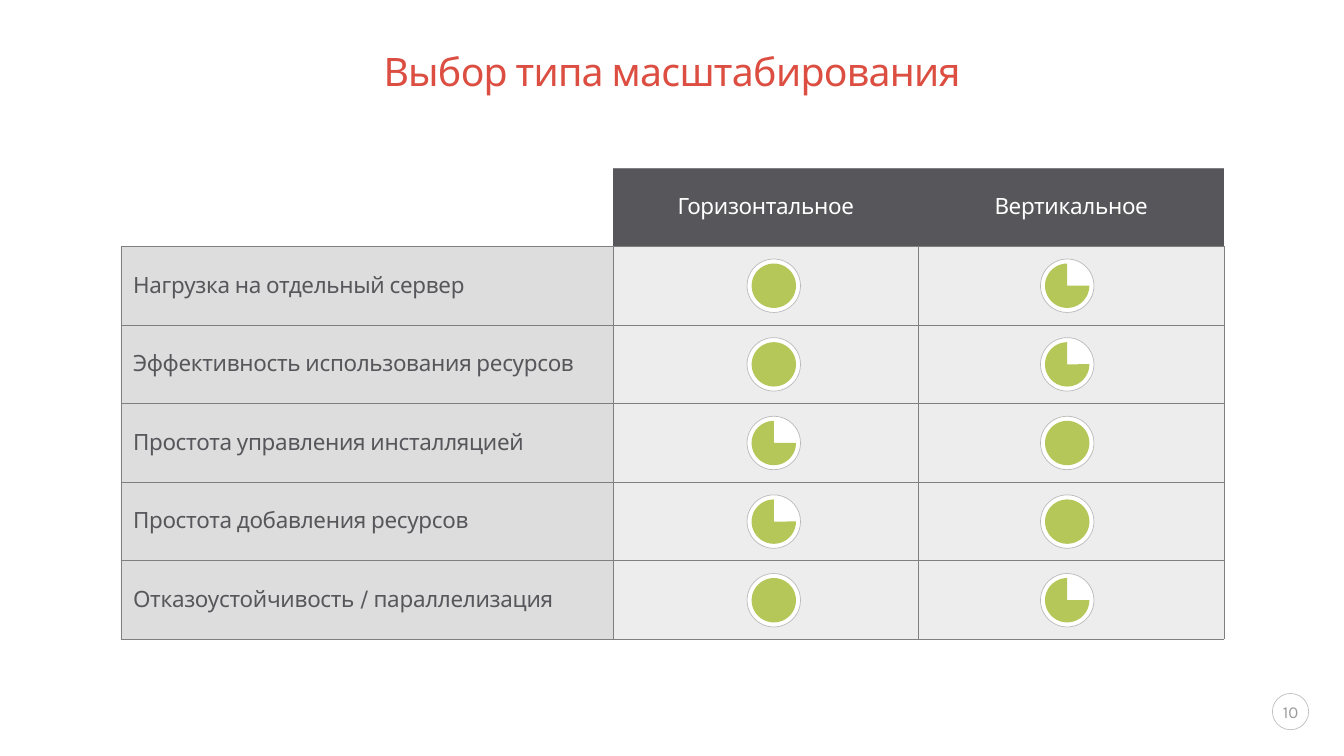
from dataclasses import dataclass

import lxml.etree
import pptx
import pptx.dml.color
import pptx.enum.shapes
import pptx.enum.text
import pptx.oxml.ns
import pptx.util

Inches = pptx.util.Inches
Pt = pptx.util.Pt
qn = pptx.oxml.ns.qn
Align = pptx.enum.text.PP_ALIGN
Shape = pptx.enum.shapes.MSO_SHAPE
MIDDLE = pptx.enum.text.MSO_ANCHOR.MIDDLE


@dataclass(frozen=True)
class Theme:
    font: str = "Karla"
    accent: str = "DC4E41"
    dark: str = "57565A"
    white: str = "FFFFFF"
    label_fill: str = "555555"
    score_fill: str = "808080"
    border: str = "7F7F7F"
    score: str = "B6C759"
    page_ring: str = "BFBFBF"
    page_text: str = "9A9A9B"
    title_size: float = 28
    table_size: float = 16
    page_size: float = 12
    line: float = 0.5


@dataclass(frozen=True)
class Criterion:
    label: str
    full: tuple[bool, bool]  # full or three-quarter score per scaling type


THEME = Theme()
HEADERS = ("Горизонтальное", "Вертикальное")
CRITERIA = (
    Criterion("Нагрузка на отдельный сервер", (True, False)),
    Criterion("Эффективность использования ресурсов", (True, False)),
    Criterion("Простота управления инсталляцией", (False, True)),
    Criterion("Простота добавления ресурсов", (False, True)),
    Criterion("Отказоустойчивость / параллелизация", (True, False)),
)
COLUMN_WIDTHS = (4.88, 3.03, 3.03)
TABLE_LEFT, TABLE_TOP, TABLE_HEIGHT = 1.2, 1.67, 4.67
ROW_HEIGHT = TABLE_HEIGHT / (len(CRITERIA) + 1)
SCORE_LEFTS = (7.41, 10.32)
SCORE_TOP, SCORE_STEP = 2.57, 0.78
RING, DISC = 0.53, 0.44
PAGE_LEFT, PAGE_TOP, PAGE_RING = 12.62, 6.88, 0.36


def rgb(color: str) -> pptx.dml.color.RGBColor:
    return pptx.dml.color.RGBColor.from_string(color)


def set_alpha(parent, percent: int) -> None:
    color = parent.find(".//" + qn("a:srgbClr"))
    lxml.etree.SubElement(color, qn("a:alpha"), val=str(percent * 1000))


def style_text(frame, text: str, size: float, color: str, align, spacing: int = 0) -> None:
    frame.text = text
    paragraph = frame.paragraphs[0]
    paragraph.alignment = align
    run = paragraph.runs[0]
    run.font.name = THEME.font
    run.font.size = Pt(size)
    run.font.color.rgb = rgb(color)
    if spacing:
        run.font._element.set("spc", str(spacing))


def set_borders(cell, sides: str) -> None:
    properties = cell._tc.get_or_add_tcPr()
    for side in "LRTB":
        line = lxml.etree.SubElement(properties, qn(f"a:ln{side}"), w=str(Pt(THEME.line)))
        if side in sides:
            fill = lxml.etree.SubElement(line, qn("a:solidFill"))
            lxml.etree.SubElement(fill, qn("a:srgbClr"), val=THEME.border)
            set_alpha(fill, 50)
        else:
            lxml.etree.SubElement(line, qn("a:noFill"))


def fill_cell(cell, color: str, alpha: int = 100) -> None:
    cell.fill.solid()
    cell.fill.fore_color.rgb = rgb(color)
    if alpha < 100:
        set_alpha(cell._tc.tcPr.find(qn("a:solidFill")), alpha)


def write_cell(cell, text: str, color: str, align) -> None:
    style_text(cell.text_frame, text, THEME.table_size, color, align, -20)
    cell.vertical_anchor = MIDDLE
    cell.margin_left = cell.margin_right = Inches(0.12)
    cell.margin_top = cell.margin_bottom = Inches(0.07)


def add_round(shapes, kind, left: float, top: float, size: float,
              fill: str | None = None, line: str | None = None):
    figure = shapes.add_shape(kind, Inches(left), Inches(top), Inches(size), Inches(size))
    figure.shadow.inherit = False
    if fill:
        figure.fill.solid()
        figure.fill.fore_color.rgb = rgb(fill)
    else:
        figure.fill.background()
    if line:
        figure.line.color.rgb = rgb(line)
        figure.line.width = Pt(THEME.line)
    else:
        figure.line.fill.background()
    return figure


def add_score(slide, left: float, top: float, full: bool) -> None:
    shapes = slide.shapes.add_group_shape().shapes
    ring = add_round(shapes, Shape.OVAL, left, top, RING, THEME.white, THEME.score_fill)
    set_alpha(ring._element.spPr.find(qn("a:ln")), 50)
    inset = (RING - DISC) / 2
    disc = add_round(shapes, Shape.OVAL if full else Shape.PIE,
                     left + inset, top + inset, DISC, THEME.score)
    if not full:
        disc.adjustments[0] = 215.7
        disc.adjustments[1] = 162


def add_label(slide, left: float, top: float, width: float, height: float):
    label = slide.shapes.add_textbox(Inches(left), Inches(top), Inches(width), Inches(height))
    frame = label.text_frame
    frame.word_wrap = True
    frame.vertical_anchor = MIDDLE
    frame.margin_left = frame.margin_right = 0
    frame.margin_top = frame.margin_bottom = 0
    return frame


def add_title(slide) -> None:
    title = add_label(slide, 1, 0.29, 11.33, 0.89)
    style_text(title, "Выбор типа масштабирования", THEME.title_size, THEME.accent,
               Align.CENTER, -50)
    title.paragraphs[0].line_spacing = 0.86


def add_page_number(slide) -> None:
    number = add_label(slide, PAGE_LEFT, PAGE_TOP, PAGE_RING, PAGE_RING)
    style_text(number, "10", THEME.page_size, THEME.page_text, Align.CENTER)
    add_round(slide.shapes, Shape.OVAL, PAGE_LEFT, PAGE_TOP, PAGE_RING, line=THEME.page_ring)


def add_comparison(slide) -> None:
    table = slide.shapes.add_table(
        len(CRITERIA) + 1, len(COLUMN_WIDTHS), Inches(TABLE_LEFT), Inches(TABLE_TOP),
        Inches(sum(COLUMN_WIDTHS)), Inches(TABLE_HEIGHT)).table
    table.first_row = table.horz_banding = False
    for column, width in zip(table.columns, COLUMN_WIDTHS):
        column.width = Inches(width)
    for row in table.rows:
        row.height = Inches(ROW_HEIGHT)

    # Header row with an empty corner
    corner = table.cell(0, 0)
    set_borders(corner, "B")
    corner.fill.background()
    for column, header in enumerate(HEADERS, 1):
        cell = table.cell(0, column)
        set_borders(cell, "TB")
        fill_cell(cell, THEME.dark)
        write_cell(cell, header, THEME.white, Align.CENTER)

    # Criteria and the cells behind their scores
    for row, criterion in enumerate(CRITERIA, 1):
        for column in range(len(COLUMN_WIDTHS)):
            cell = table.cell(row, column)
            set_borders(cell, "LRTB")
            if column:
                fill_cell(cell, THEME.score_fill, 14)
            else:
                fill_cell(cell, THEME.label_fill, 20)
                write_cell(cell, criterion.label, THEME.dark, Align.LEFT)

    # Score markers
    for row, criterion in enumerate(CRITERIA):
        for left, full in zip(SCORE_LEFTS, criterion.full):
            add_score(slide, left, SCORE_TOP + row * SCORE_STEP, full)


def main() -> None:
    deck = pptx.Presentation()
    deck.slide_width, deck.slide_height = Inches(13.33), Inches(7.5)
    slide = deck.slides.add_slide(deck.slide_layouts[6])
    add_page_number(slide)
    add_title(slide)
    add_comparison(slide)
    deck.save("out.pptx")


if __name__ == "__main__":
    main()
